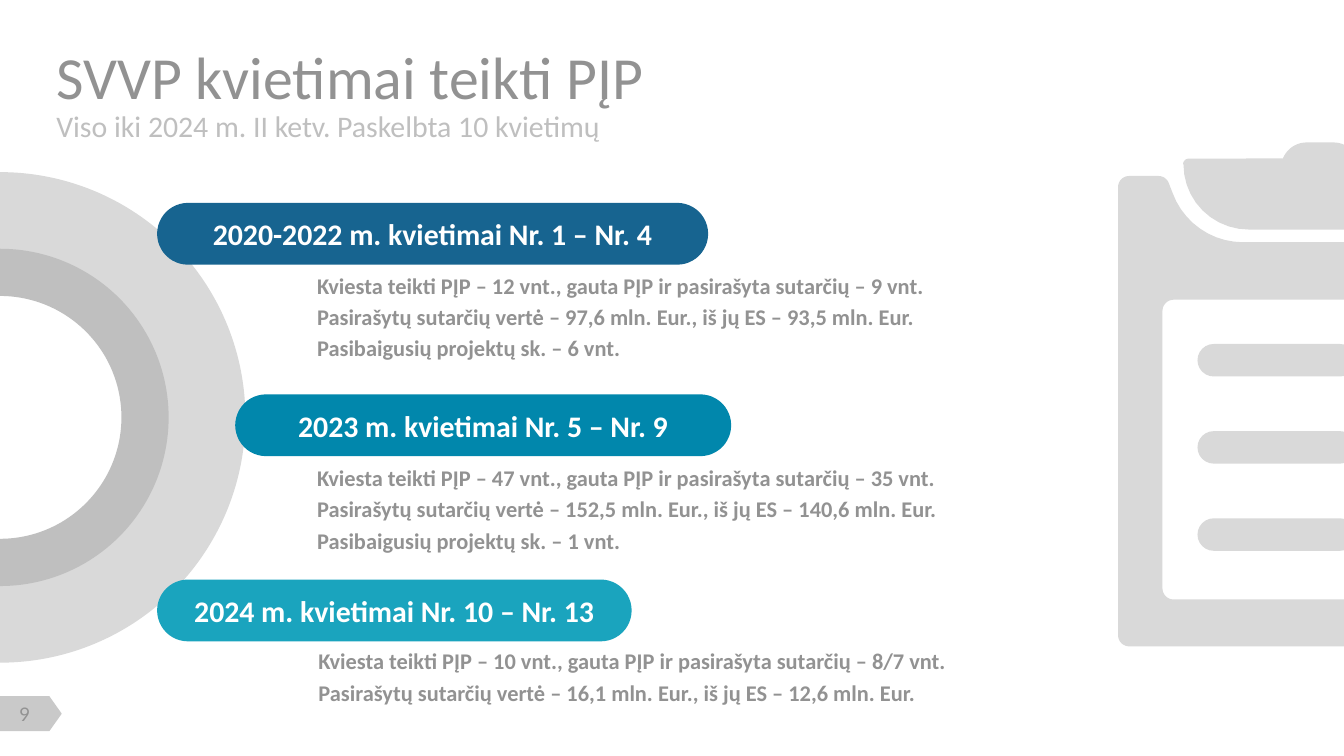
from dataclasses import dataclass
from math import cos, radians, sin

from pptx import Presentation
from pptx import util as u
from pptx.dml import color
from pptx.enum import shapes, text

Pt = u.Pt


@dataclass(frozen=True)
class Theme:
    pale: str = "D9D9D9"
    middle: str = "BFBFBF"
    tab: str = "C9C9C9"
    gray: str = "929292"
    white: str = "FFFFFF"
    navy: str = "176490"
    blue: str = "0187AC"
    teal: str = "1AA4BE"
    title: int = 32
    heading: int = 16
    body: int = 12
    number: int = 10


theme = Theme()


def write(shape, content, size, ink, font="Calibri", bold=False,
          align=text.PP_ALIGN.LEFT, gap=0):
    frame = shape.text_frame
    frame.word_wrap = True
    frame.vertical_anchor = text.MSO_ANCHOR.MIDDLE
    frame.margin_left = frame.margin_right = 0
    frame.margin_top = frame.margin_bottom = 0
    for index, line in enumerate(content.split("\n")):
        paragraph = frame.add_paragraph() if index else frame.paragraphs[0]
        paragraph.alignment = align
        paragraph.space_before = Pt(gap if index else 0)
        run = paragraph.add_run()
        run.text = line
        run.font.name = font
        run.font.size = Pt(size)
        run.font.bold = bold
        run.font.color.rgb = color.RGBColor.from_string(ink)


def arc(center_x, center_y, radius, start, end, steps=10):
    angles = [radians(start + (end - start) * step / steps) for step in range(steps + 1)]
    return [(center_x + radius * cos(a), center_y + radius * sin(a)) for a in angles]


presentation = Presentation()
presentation.slide_width = Pt(720)
presentation.slide_height = Pt(405)
slide = presentation.slides.add_slide(presentation.slide_layouts[6])
canvas = slide.shapes
kinds = shapes.MSO_SHAPE

page_tab = canvas.add_shape(kinds.FLOWCHART_OFFPAGE_CONNECTOR, Pt(7.2), Pt(365.8), Pt(18.7), Pt(33.1))
page_tab.rotation = 270
page_tab.fill.solid()
page_tab.fill.fore_color.rgb = color.RGBColor.from_string(theme.tab)
page_number = canvas.add_textbox(Pt(1.4), Pt(376.5), Pt(23.8), Pt(12.2))
write(page_number, "9", theme.number, theme.gray, font="Lato", align=text.PP_ALIGN.CENTER)

subtitle = canvas.add_textbox(Pt(30.2), Pt(60.5), Pt(659), Pt(13.7))
write(subtitle, "Viso iki 2024 m. II ketv. Paskelbta 10 kvietimų", theme.heading, theme.middle)
title = canvas.add_textbox(Pt(30.2), Pt(26.6), Pt(659), Pt(28.1))
write(title, "SVVP kvietimai teikti PĮP", theme.title, theme.gray)

ring_middle = 223.6
for diameter, thickness, fill in [(262.8, 0.25, theme.pale), (180.7, 0.14, theme.middle)]:
    ring = canvas.add_shape(kinds.BLOCK_ARC, Pt(-diameter / 2), Pt(ring_middle - diameter / 2),
                            Pt(diameter), Pt(diameter))
    ring.rotation = 90
    ring.adjustments[2] = thickness
    ring.fill.solid()
    ring.fill.fore_color.rgb = color.RGBColor.from_string(fill)

calls = [
    (84.2, 108.7, 295.2, theme.navy, "2020-2022 m. kvietimai Nr. 1 – Nr. 4",
     169.9, 144.7, 49.7,
     "Kviesta teikti PĮP – 12 vnt., gauta PĮP ir pasirašyta sutarčių – 9 vnt.\n"
     "Pasirašytų sutarčių vertė – 97,6 mln. Eur., iš jų ES – 93,5 mln. Eur.\n"
     "Pasibaigusių projektų sk. – 6 vnt."),
    (126, 211.3, 265.7, theme.blue, "2023 m. kvietimai Nr. 5 – Nr. 9",
     169.9, 247.7, 49.7,
     "Kviesta teikti PĮP – 47 vnt., gauta PĮP ir pasirašyta sutarčių – 35 vnt.\n"
     "Pasirašytų sutarčių vertė – 152,5 mln. Eur., iš jų ES – 140,6 mln. Eur.\n"
     "Pasibaigusių projektų sk. – 1 vnt."),
    (84.2, 310.5, 254.2, theme.teal, "2024 m. kvietimai Nr. 10 – Nr. 13",
     170.6, 346.7, 31.7,
     "Kviesta teikti PĮP – 10 vnt., gauta PĮP ir pasirašyta sutarčių – 8/7 vnt.\n"
     "Pasirašytų sutarčių vertė – 16,1 mln. Eur., iš jų ES – 12,6 mln. Eur."),
]
for left, top, width, fill, heading, text_left, text_top, text_height, details in calls:
    pill = canvas.add_shape(kinds.ROUNDED_RECTANGLE, Pt(left), Pt(top), Pt(width), Pt(33.1))
    pill.adjustments[0] = 0.5
    pill.fill.solid()
    pill.fill.fore_color.rgb = color.RGBColor.from_string(fill)
    write(pill, heading, theme.heading, theme.white, bold=True, align=text.PP_ALIGN.CENTER)
    box = canvas.add_textbox(Pt(text_left), Pt(text_top), Pt(376), Pt(text_height))
    write(box, details, theme.body, theme.gray, bold=True, gap=2.4)

clip_half = (arc(700, 90, 13.7, 270, 202) + arc(636.8, 88, 3, 270, 180)
             + arc(669, 88, 35, 180, 90))
board_half = (arc(666, 89.6, 40.2, 90, 160) + arc(620.6, 100.3, 6, 340, 270)
              + arc(605, 100.3, 6, 270, 180) + arc(605, 340.3, 6, 180, 90))
paper_half = arc(628.8, 166.6, 6, 270, 180) + arc(628.8, 315.2, 6, 180, 90)
clipboard_middle = 707.2

for halves in [[clip_half], [board_half, paper_half]]:
    builder = None
    for half in halves:
        mirrored = [(2 * clipboard_middle - x, y) for x, y in reversed(half)]
        points = [(Pt(x), Pt(y)) for x, y in half + mirrored]
        if builder is None:
            builder = canvas.build_freeform(*points[0])
        else:
            builder.move_to(*points[0])
        builder.add_line_segments(points[1:], close=True)
    outline = builder.convert_to_shape()
    outline.fill.solid()
    outline.fill.fore_color.rgb = color.RGBColor.from_string(theme.pale)

for row in range(3):
    line_bar = canvas.add_shape(kinds.ROUNDED_RECTANGLE, Pt(641.5), Pt(184.3 + 46.7 * row),
                                Pt(85), Pt(17.4))
    line_bar.adjustments[0] = 0.5
    line_bar.fill.solid()
    line_bar.fill.fore_color.rgb = color.RGBColor.from_string(theme.pale)

for shape in canvas:
    shape.shadow.inherit = False
    shape.line.fill.background()

presentation.save("out.pptx")
